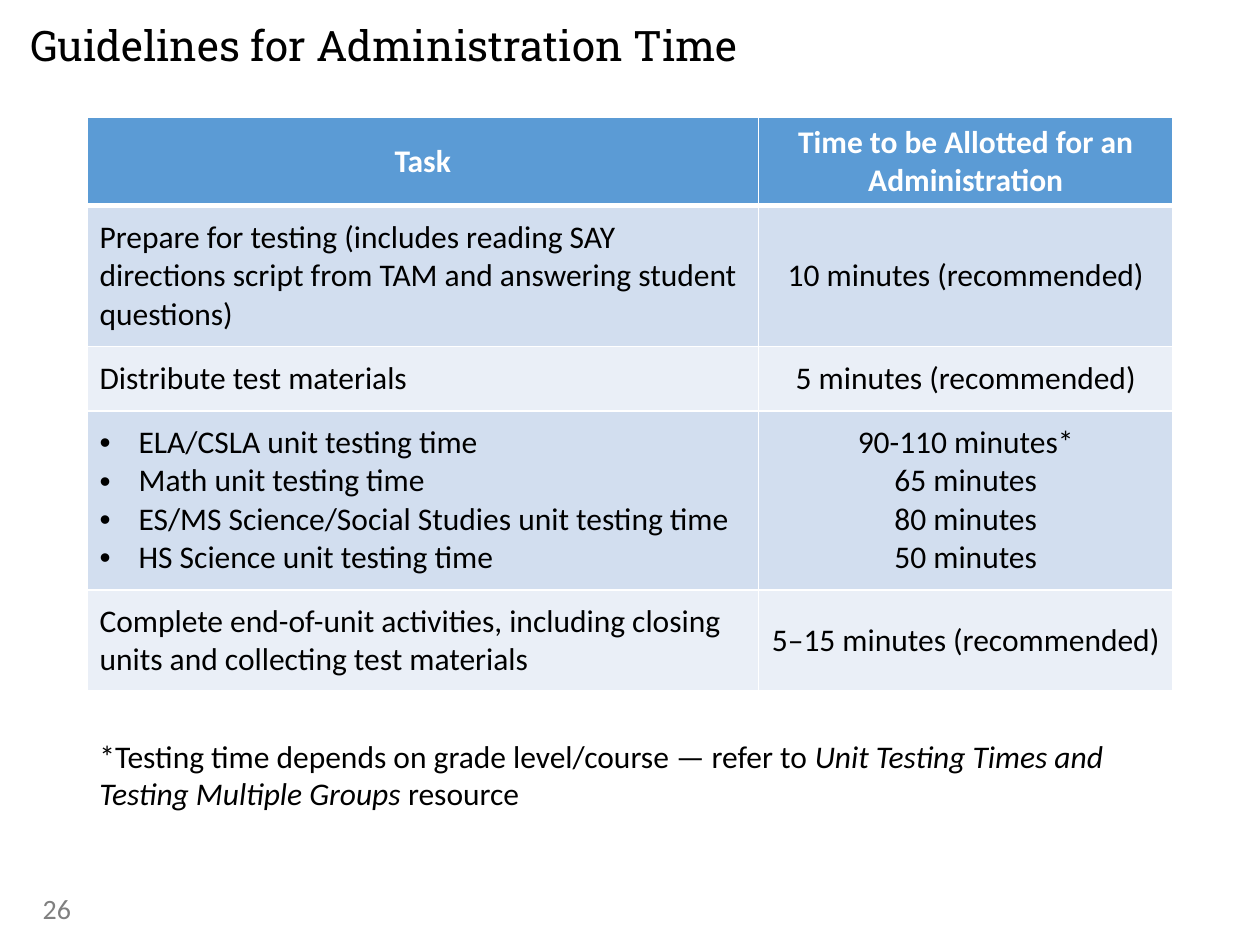
from pptx import Presentation as Deck
from pptx.dml.color import RGBColor as Rgb
from pptx.enum.text import MSO_ANCHOR as Anchor, PP_ALIGN as Align
from pptx.oxml.ns import qn
from pptx.util import Inches, Pt
from lxml.etree import SubElement as Sub, Element

WIDE, HIGH = Inches(10), Inches(7.5)
INK = {"text": "000000", "page": "FFFFFF", "head": "5B9BD5",
       "odd": "D2DEEF", "even": "EAEFF7", "num": "808080"}
BODY, SERIF = "Calibri", "Roboto Slab"
COLS = [5.33, 3.29]
ROWS = [
    (0.7, ["Task"], ["Time to be Allotted for an Administration"]),
    (1.12, ["Prepare for testing (includes reading SAY directions script "
            "from TAM and answering student questions)"],
     ["10 minutes (recommended)"]),
    (0.51, ["Distribute test materials"], ["5 minutes (recommended)"]),
    (1.42, ["ELA/CSLA unit testing time", "Math unit testing time",
            "ES/MS Science/Social Studies unit testing time",
            "HS Science unit testing time"],
     ["90-110 minutes*", "65 minutes", "80 minutes", "50 minutes"]),
    (0.8, ["Complete end-of-unit activities, including closing units and "
           "collecting test materials"], ["5–15 minutes (recommended)"]),
]
NOTE = [("*Testing time depends on grade level/course — refer to ", False),
        ("Unit Testing Times and Testing Multiple Groups ", True),
        ("resource", False)]


def share(x, y, w, h):
    """Turn shares of the slide into a box of lengths."""
    return [round(n) for n in (x * WIDE, y * HIGH, w * WIDE, h * HIGH)]


def style(run, size, ink, face=BODY, bold=False, slant=False):
    """Give a run its font."""
    font = run.font
    font.name, font.size, font.bold, font.italic = face, Pt(size), bold, slant
    font.color.rgb = Rgb.from_string(INK[ink])


def label(slide, box, parts, size, ink, face=BODY, flush=False):
    """Place a text box made of (words, italic) parts."""
    frame = slide.shapes.add_textbox(*box).text_frame
    frame.word_wrap = True
    para = frame.paragraphs[0]
    if flush:
        frame.margin_left = frame.margin_right = 0
        frame.margin_top = frame.margin_bottom = 0
        frame.vertical_anchor = Anchor.MIDDLE
        para.line_spacing = 0.9
    for words, slant in parts:
        run = para.add_run()
        run.text = words
        style(run, size, ink, face, slant=slant)


def bullet(para):
    """Hang a round bullet before a paragraph."""
    props = para._p.get_or_add_pPr()
    props.set("marL", str(Inches(0.31)))
    props.set("indent", str(-Inches(0.31)))
    Sub(props, qn("a:buFont")).set("typeface", "Arial")
    Sub(props, qn("a:buChar")).set("char", "•")


def edge(cell, foot):
    """Draw white cell borders, with the given width at the foot."""
    props = cell._tc.get_or_add_tcPr()
    for spot, side in enumerate("LRTB"):
        line = Element(qn(f"a:ln{side}"), w=str(Pt(foot if side == "B" else 1)))
        fill = Sub(line, qn("a:solidFill"))
        Sub(fill, qn("a:srgbClr")).set("val", INK["page"])
        props.insert(spot, line)


def fill_cell(cell, lines, head, ink, mid):
    """Write and format one table cell."""
    cell.fill.solid()
    cell.fill.fore_color.rgb = Rgb.from_string(INK[ink])
    edge(cell, 3 if head else 1)
    cell.vertical_anchor = Anchor.MIDDLE
    cell.margin_left = cell.margin_right = Inches(0.1)
    cell.margin_top = cell.margin_bottom = Inches(0.05 if head else 0.1)
    cell.text_frame.text = "\n".join(lines)
    for para in cell.text_frame.paragraphs:
        if mid:
            para.alignment = Align.CENTER
        elif len(lines) > 1:
            bullet(para)
        for run in para.runs:
            style(run, 18, "page" if head else "text", bold=head)


def grid(slide, box):
    """Place the table of tasks and times in the box."""
    table = slide.shapes.add_table(len(ROWS), len(COLS), *box).table
    for col, part in zip(table.columns, COLS):
        col.width = round(box[2] * part / sum(COLS))
    total = sum(row[0] for row in ROWS)
    for r, (part, *cells) in enumerate(ROWS):
        table.rows[r].height = round(box[3] * part / total)
        head = r == 0
        ink = "head" if head else "odd" if r % 2 else "even"
        for c, lines in enumerate(cells):
            fill_cell(table.cell(r, c), lines, head, ink, head or c == 1)


def main():
    """Build and save the slide."""
    deck = Deck()
    deck.slide_width, deck.slide_height = WIDE, HIGH
    slide = deck.slides.add_slide(deck.slide_layouts[6])
    label(slide, share(0.024, 0.024, 0.95, 0.053),
          [("Guidelines for Administration Time", False)],
          24, "text", SERIF, True)
    grid(slide, share(0.069, 0.124, 0.862, 0.607))
    label(slide, share(0.024, 0.937, 0.225, 0.053), [("26", False)], 16, "num")
    label(slide, share(0.069, 0.773, 0.862, 0.095), NOTE, 18, "text")
    deck.save("out.pptx")


if __name__ == "__main__":
    main()
